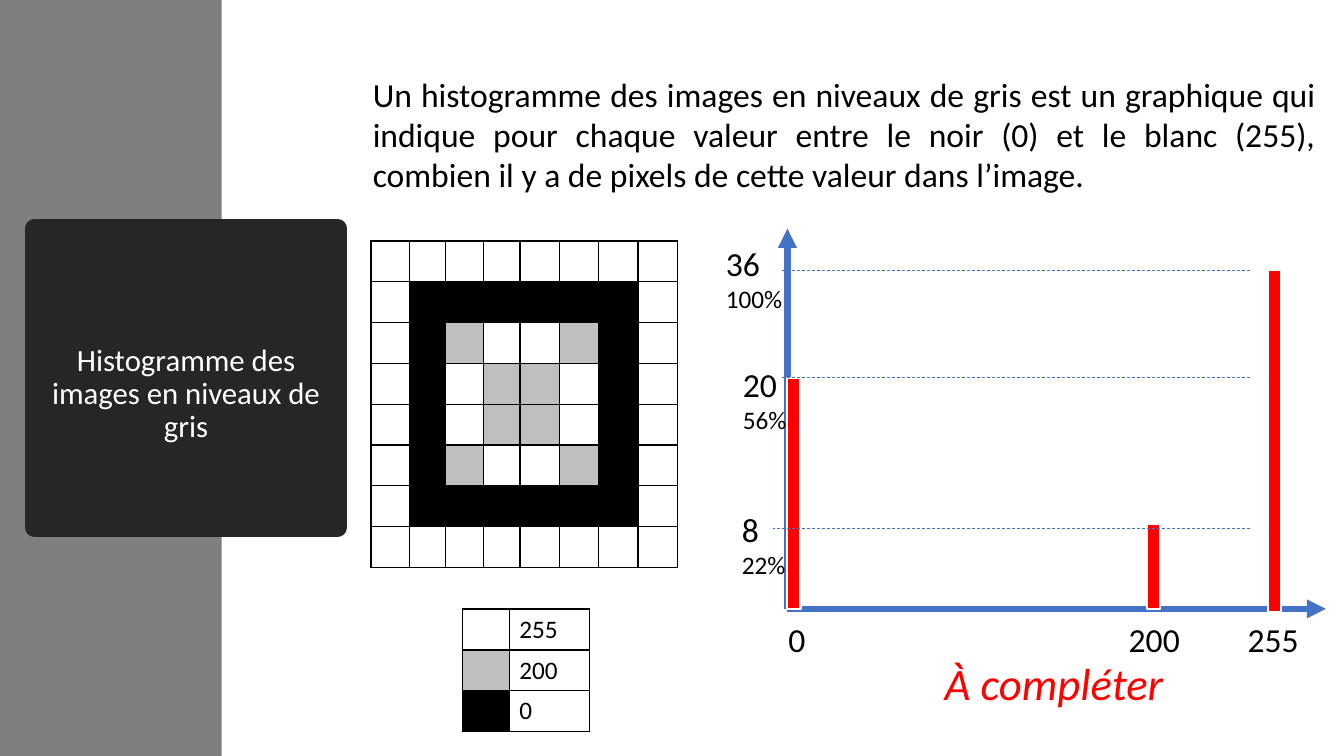
import pptx
import pptx.util
import pptx.dml.color
import pptx.enum.dml
import pptx.enum.shapes
import pptx.enum.text
import pptx.oxml
import pptx.oxml.ns

Inches, Pt = pptx.util.Inches, pptx.util.Pt
Align = pptx.enum.text.PP_ALIGN
Kind = pptx.enum.shapes.MSO_SHAPE
PAGE = (0, 0, 13.33, 7.5)
FONT = "Calibri"
BLUE, RED, BLACK, WHITE, GREY = "4472C4", "FF0000", "000000", "FFFFFF", "BFBFBF"
SHADE = {".": WHITE, "o": GREY, "#": BLACK}
PIXELS = ["........", ".######.", ".#o..o#.", ".#.oo.#.",
          ".#.oo.#.", ".#o..o#.", ".######.", "........"]


def color(code):
    return pptx.dml.color.RGBColor.from_string(code)


def part(box, left, top, width, height):
    x, y, w, h = box
    return (x + w * left / 100, y + h * top / 100, w * width / 100, h * height / 100)


def assign(item, values):
    for name, value in values.items():
        setattr(item, name, value)


def node(parent, tag, **attrs):
    child = pptx.oxml.parse_xml(f"<a:{tag} {pptx.oxml.ns.nsdecls('a')}/>")
    for name, value in attrs.items():
        child.set(name, str(value))
    parent.append(child)
    return child


def write(para, text, size, code=BLACK, **look):
    para.text = text
    assign(para.font, {"name": FONT, "size": Pt(size), **look})
    para.font.color.rgb = color(code)


def label(slide, box, lines, align=Align.JUSTIFY, code=BLACK, wrap=True, tabs=(), **look):
    frame = slide.shapes.add_textbox(*map(Inches, box)).text_frame
    frame.word_wrap = wrap
    for row, (text, size) in enumerate(lines):
        para = frame.add_paragraph() if row else frame.paragraphs[0]
        para.alignment = align
        if tabs:
            stops = node(para._p.get_or_add_pPr(), "tabLst")
            for stop in tabs:
                node(stops, "tab", pos=Inches(stop), algn="ctr")
        write(para, text, size, code, **look)


def block(slide, box, fill, edge=None, width=1):
    shape = slide.shapes.add_shape(Kind.RECTANGLE, *map(Inches, box))
    shape.shadow.inherit = False
    shape.fill.solid()
    shape.fill.fore_color.rgb = color(fill)
    if edge:
        shape.line.color.rgb = color(edge)
        shape.line.width = Pt(width)
    else:
        shape.line.fill.background()
    return shape


def line(slide, box, width, arrow=False):
    x, y, w, h = box
    link = slide.shapes.add_connector(
        pptx.enum.shapes.MSO_CONNECTOR.STRAIGHT, *map(Inches, (x, y, x + w, y + h)))
    link.line.color.rgb = color(BLUE)
    link.line.width = Pt(width)
    if arrow:
        node(link.line._get_or_add_ln(), "tailEnd", type="triangle")
    else:
        link.line.dash_style = pptx.enum.dml.MSO_LINE.DASH
    node(link._element.spPr, "effectLst")


def table(slide, box, cols, fills, words=None):
    count = len(fills)
    grid = slide.shapes.add_table(count, len(cols), *map(Inches, box)).table
    assign(grid, {"first_row": False, "horz_banding": False})
    for col, share in zip(grid.columns, cols):
        col.width = Inches(box[2] * share / sum(cols))
    for r, row in enumerate(grid.rows):
        row.height = Inches(box[3] / count)
        for c, cell in enumerate(row.cells):
            props = cell._tc.get_or_add_tcPr()
            for side in ("lnL", "lnR", "lnT", "lnB"):
                edge = node(props, side, w=Pt(1))
                node(node(edge, "solidFill"), "srgbClr", val=BLACK)
            cell.fill.solid()
            cell.fill.fore_color.rgb = color(SHADE[fills[r][c]])
            write(cell.text_frame.paragraphs[0], words[r][c] if words else "", 18)


def banner(slide, box):
    block(slide, part(box, 0, 0, 16.5, 100), "7F7F7F")
    card = block(slide, part(box, 2.55, 30.27, 22.58, 39.47), "262626", "262626", 13.75)
    node(card.line._get_or_add_ln(), "round")
    frame = card.text_frame
    assign(frame, {"word_wrap": True, "margin_top": Inches(0.38),
                   "vertical_anchor": pptx.enum.text.MSO_ANCHOR.MIDDLE})
    para = frame.paragraphs[0]
    assign(para, {"alignment": Align.CENTER, "line_spacing": 0.9})
    write(para, "Histogramme des images en niveaux de gris", 22, WHITE)


def sample(slide, box):
    table(slide, part(box, 0, 0, 100, 66.5), [38, 36, 38, 36, 39, 39, 39, 39], PIXELS)
    table(slide, part(box, 29.93, 75, 41.45, 25), [46, 79],
          [".."] + ["o.", "#."], [["", "255"], ["", "200"], ["", "0"]])


def plot(slide, box):
    line(slide, part(box, 0, 100, 0, -100), 4.5, True)
    line(slide, part(box, 0, 100, 100, 0), 4.5, True)
    label(slide, part(box, -1.69, 101.33, 101.31, 13.26), [("0\t200\t255", 24)],
          align=Align.LEFT, tabs=(3.63, 4.81))
    for left, top, tall in [(0, 39.26, 60.74), (66.85, 77.72, 22.28), (89.33, 10.88, 89.92)]:
        block(slide, part(box, left, top, 2.43, tall), RED, WHITE, 1.5)
    marks = [("36", "100%", -13.3, 2.39, 18, -1.12, 10.88),
             ("20", "56%", -10.11, 34.22, 15, -1.12, 39),
             ("8", "22%", -10.3, 72.41, 15, -2.62, 78.78)]
    for total, rate, left, top, wide, start, level in marks:
        line(slide, part(box, 85.96, level, start - 85.96, 0), 0.5)
        label(slide, part(box, left, top, wide, 21.5), [(total, 24), (rate, 18)])
    label(slide, part(box, 27.34, 111.14, 45.5, 16.98), [("À compléter", 32)],
          align=Align.LEFT, code=RED, wrap=False, italic=True)


def main():
    deck = pptx.Presentation()
    assign(deck, {"slide_width": Inches(PAGE[2]), "slide_height": Inches(PAGE[3])})
    slide = deck.slides.add_slide(deck.slide_layouts[6])
    banner(slide, PAGE)
    label(slide, part(PAGE, 27, 9.07, 71.64, 17.47), [(
        "Un histogramme des images en niveaux de gris est un graphique qui indique "
        "pour chaque valeur entre le noir (0) et le blanc (255), combien il y a de "
        "pixels de cette valeur dans l’image.", 24)])
    sample(slide, part(PAGE, 27.6, 31.87, 22.8, 64.93))
    plot(slide, part(PAGE, 58.59, 30.27, 40.06, 50.27))
    deck.save("out.pptx")


if __name__ == "__main__":
    main()
